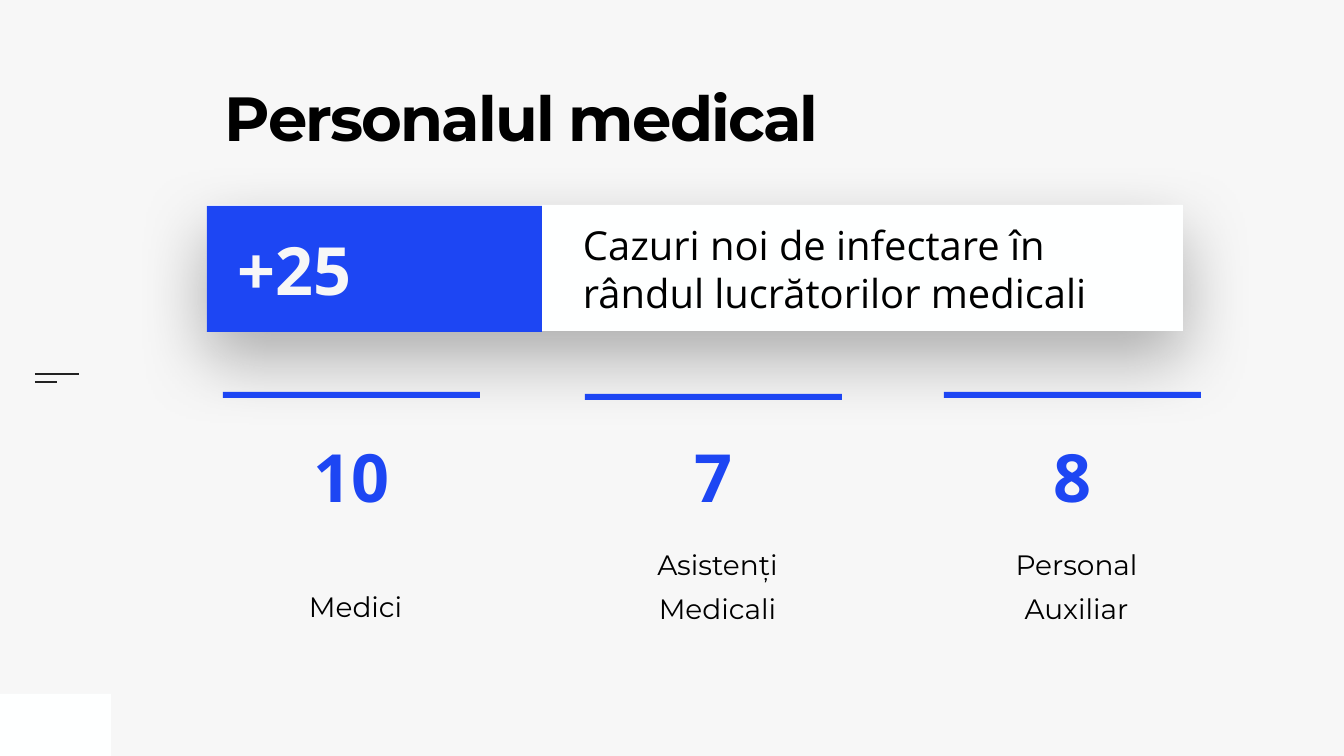
from lxml.etree import SubElement
from pptx import Presentation
from pptx.dml.color import RGBColor
from pptx.enum.shapes import MSO_CONNECTOR as Connector, MSO_SHAPE as Shape
from pptx.enum.text import MSO_ANCHOR as Anchor, MSO_AUTO_SIZE as AutoSize, PP_ALIGN as Align
from pptx.oxml.ns import qn
from pptx.util import Emu, Pt

BACKGROUND = RGBColor(0xF7, 0xF7, 0xF7)
WHITE = RGBColor(0xFE, 0xFF, 0xFF)
BLUE = RGBColor(0x1D, 0x46, 0xF3)
BLACK = RGBColor(0, 0, 0)
DARK = RGBColor(0x22, 0x22, 0x22)

TITLE = "Personalul medical"
TOTAL = "+25"
TOTAL_LABEL = "Cazuri noi de infectare în rândul lucrătorilor medicali"
CARDS = [
    ("10", "Medici", 223, 392, 392),
    ("7", "Asistenți Medicali", 585, 394, 394),
    ("8", "Personal Auxiliar", 944, 394, 392),
]
CARD_WIDTH, CARD_HEIGHT, BAR_HEIGHT = 257, 275, 6
NUMBER_TOP, NUMBER_HEIGHT = 430, 91
MENU_LINES = [(35, 79, 374), (35, 57, 382)]

TITLE_FONT = {"name": "Montserrat", "size": Pt(89), "bold": True}
LABEL_FONT = {"name": "Montserrat", "size": Pt(40), "bold": False}
BANNER_FONT = {"name": "Open Sans", "size": Pt(57), "bold": False}
NUMBER_FONT = {"name": "Open Sans", "size": Pt(95), "bold": True}
CARD_PARAGRAPH = {"alignment": Align.CENTER, "line_spacing": 1.3, "space_before": Pt(20)}
CENTERED = {"alignment": Align.CENTER}
LEFT = {"alignment": Align.LEFT}
CARD_INSETS = (28, 36, 20, 44)
TEXT_INSETS = (5, 5, 5, 5)


def px(value):
    return Emu(round(value * 914400 / 50.4))


def set_attributes(target, values):
    for name, value in values.items():
        setattr(target, name, value)


def write(shape, text, font, color, paragraph_format, insets, anchor):
    frame = shape.text_frame
    frame.text = text
    sides = ("margin_left", "margin_top", "margin_right", "margin_bottom")
    set_attributes(frame, dict(zip(sides, map(px, insets))))
    set_attributes(frame, {"word_wrap": True, "auto_size": AutoSize.NONE,
                           "vertical_anchor": anchor})
    paragraph = frame.paragraphs[0]
    set_attributes(paragraph, paragraph_format)
    run = paragraph.runs[0]
    set_attributes(run.font, font)
    run.font.color.rgb = color
    return run


def add_rectangle(slide, left, top, width, height, color):
    shape = slide.shapes.add_shape(Shape.RECTANGLE, *map(px, (left, top, width, height)))
    shape.shadow.inherit = False
    shape.fill.solid()
    shape.fill.fore_color.rgb = color
    shape.line.fill.background()
    return shape


def add_text(slide, box, text, font, color, paragraph_format):
    shape = slide.shapes.add_textbox(*map(px, box))
    write(shape, text, font, color, paragraph_format, TEXT_INSETS, Anchor.MIDDLE)


def add_soft_shadow(shape):
    effects = shape._element.spPr.find(qn("a:effectLst"))
    shadow = SubElement(effects, qn("a:outerShdw"), blurRad=str(Pt(100)),
                        dist=str(Pt(40)), dir="5400000", rotWithShape="0")
    color = SubElement(shadow, qn("a:srgbClr"), val="000000")
    SubElement(color, qn("a:alpha"), val="30000")


def add_menu_lines(slide):
    for start, end, y in MENU_LINES:
        line = slide.shapes.add_connector(Connector.STRAIGHT, px(start), px(y), px(end), px(y))
        line.line.color.rgb = DARK
        line.line.width = Pt(3)
        SubElement(line._element.spPr, qn("a:effectLst"))


def add_title(slide):
    title = slide.shapes.title
    box = (225, 94, 656, 138)
    set_attributes(title, dict(zip(("left", "top", "width", "height"), map(px, box))))
    run = write(title, TITLE, TITLE_FONT, BLACK, LEFT | {"line_spacing": 0.8},
                (0, 0, 0, 0), Anchor.TOP)
    run._r.get_or_add_rPr().set("spc", "-270")


def add_banner(slide):
    add_soft_shadow(add_rectangle(slide, 207, 205, 976, 126, WHITE))
    add_text(slide, (578, 215, 593, 107), TOTAL_LABEL, BANNER_FONT, BLACK, LEFT)
    add_rectangle(slide, 207, 206, 335, 126, BLUE)
    add_text(slide, (233, 223, 304, 91), TOTAL, NUMBER_FONT, BACKGROUND, LEFT)


def main():
    presentation = Presentation()
    presentation.slide_width, presentation.slide_height = px(1344), px(756)
    slide = presentation.slides.add_slide(presentation.slide_layouts[5])
    slide.background.fill.solid()
    slide.background.fill.fore_color.rgb = BACKGROUND

    add_rectangle(slide, 0, 694, 111, 62, WHITE)
    add_menu_lines(slide)
    for number, label, left, top, bar_top in CARDS:
        card = add_rectangle(slide, left, top, CARD_WIDTH, CARD_HEIGHT, BACKGROUND)
        write(card, label, LABEL_FONT, BLACK, CARD_PARAGRAPH, CARD_INSETS, Anchor.BOTTOM)
    add_title(slide)
    add_banner(slide)
    for number, label, left, top, bar_top in CARDS:
        add_rectangle(slide, left, bar_top, CARD_WIDTH, BAR_HEIGHT, BLUE)
        add_text(slide, (left, NUMBER_TOP, CARD_WIDTH, NUMBER_HEIGHT), number,
                 NUMBER_FONT, BLUE, CENTERED)
    presentation.save("out.pptx")


if __name__ == "__main__":
    main()
